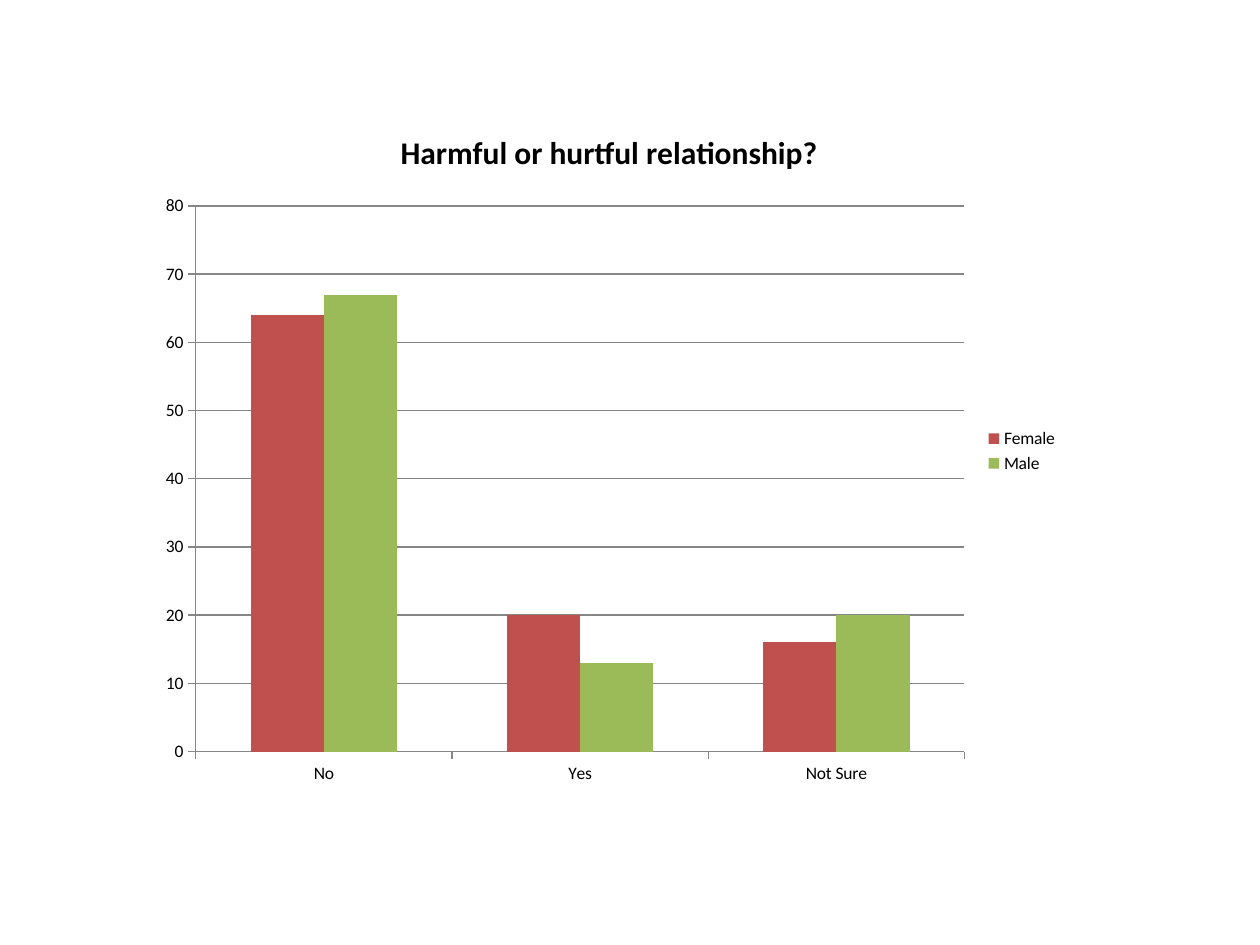
from pptx import Presentation
from pptx import util as u
from pptx.chart.data import CategoryChartData
from pptx.dml.color import RGBColor
from pptx.enum import chart as charts

FONT = "Calibri"
BLACK, GREY = "000000", "868686"
TITLE = "Harmful or hurtful relationship?"
ANSWERS = ["No", "Yes", "Not Sure"]
SERIES = {"Female": ((64, 20, 16), "C0504D"), "Male": ((67, 13, 20), "9BBB59")}


def colour(hex_string):
    return RGBColor.from_string(hex_string)


def format_font(font, size, bold=False):
    for name, value in {"name": FONT, "size": u.Pt(size), "bold": bold}.items():
        setattr(font, name, value)
    font.color.rgb = colour(BLACK)


def format_line(line):
    line.color.rgb = colour(GREY)
    line.width = u.Pt(0.75)


def format_axes(chart):
    for axis in (chart.category_axis, chart.value_axis):
        axis.major_tick_mark = charts.XL_TICK_MARK.OUTSIDE
        axis.minor_tick_mark = charts.XL_TICK_MARK.NONE
        format_line(axis.format.line)
    value_axis = chart.value_axis
    limits = {"minimum_scale": 0, "maximum_scale": 80, "major_unit": 10,
              "has_major_gridlines": True}
    for name, value in limits.items():
        setattr(value_axis, name, value)
    format_line(value_axis.major_gridlines.format.line)


def add_answer_chart(slide, left, top, width, height):
    data = CategoryChartData(number_format="General")
    data.categories = ANSWERS
    for name, (values, _) in SERIES.items():
        data.add_series(name, values)
    chart = slide.shapes.add_chart(
        charts.XL_CHART_TYPE.COLUMN_CLUSTERED, left, top, width, height, data).chart
    format_font(chart.font, 10)

    chart.has_title = True
    title = chart.chart_title.text_frame
    title.text = TITLE
    format_font(title.paragraphs[0].runs[0].font, 18, bold=True)

    chart.has_legend = True
    chart.legend.position = charts.XL_LEGEND_POSITION.RIGHT
    chart.legend.include_in_layout = False

    format_axes(chart)
    plot = chart.plots[0]
    for name, value in {"gap_width": 150, "overlap": 0, "vary_by_categories": False}.items():
        setattr(plot, name, value)
    for series, (_, fill) in zip(plot.series, SERIES.values()):
        series.format.fill.solid()
        series.format.fill.fore_color.rgb = colour(fill)


def main():
    presentation = Presentation()
    presentation.slide_width = u.Inches(10)
    presentation.slide_height = u.Inches(7.5)
    slide = presentation.slides.add_slide(presentation.slide_layouts[6])
    add_answer_chart(slide, u.Inches(1.17), u.Inches(0.83), u.Inches(7.33), u.Inches(5.5))
    presentation.save("out.pptx")


if __name__ == "__main__":
    main()
